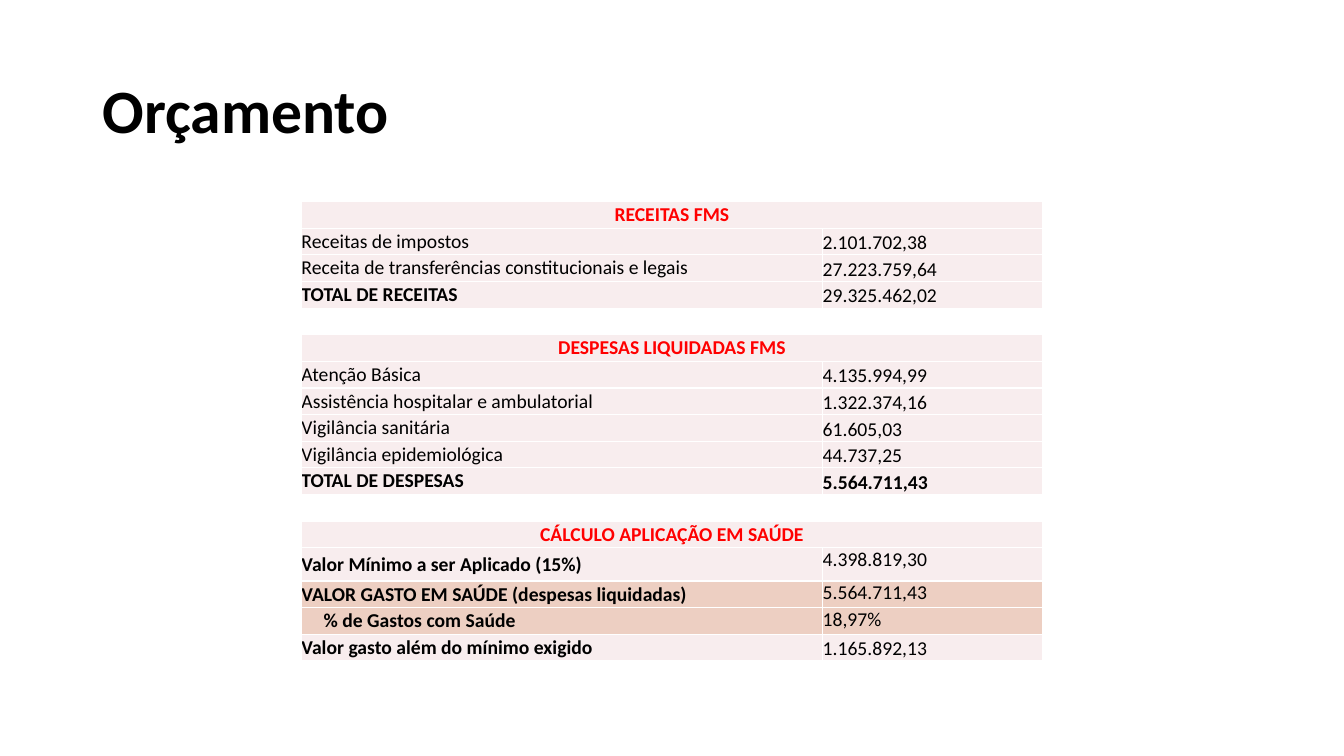
from dataclasses import dataclass

from lxml.etree import SubElement
from pptx import Presentation
from pptx.dml.color import RGBColor
from pptx.enum.text import MSO_ANCHOR as Anchor, PP_ALIGN as Align
from pptx.oxml import parse_xml
from pptx.oxml.ns import nsdecls, qn
from pptx.util import Inches, Pt


@dataclass(frozen=True)
class Theme:
    font: str = "Calibri"
    title_size: int = 44
    table_size: int = 14
    text: str = "000000"
    heading: str = "FF0000"
    white: str = "FFFFFF"
    row: str = "F8EDEE"
    highlight: str = "EDCFC2"


THEME = Theme()
COLUMN_WIDTHS = (5.17, 2.18)
TABLE_HEIGHT = 4.56
TALL_ROW, TALL_HEIGHT = 13, 0.33


@dataclass(frozen=True)
class Entry:
    label: str
    value: str
    label_bold: bool = False
    value_bold: bool = False
    value_anchor: Anchor = Anchor.BOTTOM
    fill: str = THEME.row
    indent: float = 0


@dataclass(frozen=True)
class Heading:
    text: str


@dataclass(frozen=True)
class Gap:
    merged: bool


ROWS = (
    Heading("RECEITAS FMS"),
    Entry("Receitas de impostos", "2.101.702,38"),
    Entry("Receita de transferências constitucionais e legais", "27.223.759,64"),
    Entry("TOTAL DE RECEITAS", "29.325.462,02", label_bold=True),
    Gap(merged=False),
    Heading("DESPESAS LIQUIDADAS FMS"),
    Entry("Atenção Básica", "4.135.994,99"),
    Entry("Assistência hospitalar e ambulatorial", "1.322.374,16"),
    Entry("Vigilância sanitária", "61.605,03"),
    Entry("Vigilância epidemiológica", "44.737,25"),
    Entry("TOTAL DE DESPESAS", "5.564.711,43", label_bold=True, value_bold=True),
    Gap(merged=True),
    Heading("CÁLCULO APLICAÇÃO EM SAÚDE"),
    Entry("Valor Mínimo a ser Aplicado (15%)", "4.398.819,30", label_bold=True,
          value_anchor=Anchor.TOP),
    Entry("VALOR GASTO EM SAÚDE (despesas liquidadas)", "5.564.711,43", label_bold=True,
          value_anchor=Anchor.TOP, fill=THEME.highlight),
    Entry("% de Gastos com Saúde", "18,97%", label_bold=True,
          value_anchor=Anchor.TOP, fill=THEME.highlight, indent=0.22),
    Entry("Valor gasto além do mínimo exigido", "1.165.892,13", label_bold=True),
)


def set_values(target, values):
    for name, value in values.items():
        setattr(target, name, value)


def add_run(paragraph, text, size, color=THEME.text, bold=False):
    run = paragraph.add_run()
    run.text = text
    set_values(run.font, {"name": THEME.font, "size": Pt(size), "bold": bold})
    run.font.color.rgb = RGBColor.from_string(color)


def add_title(slide, text):
    box = slide.shapes.add_textbox(Inches(0.92), Inches(0.4), Inches(11.5), Inches(1.45))
    set_values(box.text_frame, {"word_wrap": True, "vertical_anchor": Anchor.MIDDLE})
    paragraph = box.text_frame.paragraphs[0]
    paragraph.line_spacing = 0.9
    add_run(paragraph, text, THEME.title_size, bold=True)


def set_borders(cell):
    properties = cell._tc.get_or_add_tcPr()
    for index, side in enumerate(("lnL", "lnR", "lnT", "lnB")):
        properties.insert(index, parse_xml(
            f'<a:{side} {nsdecls("a")} w="{Pt(1)}"><a:solidFill>'
            f'<a:srgbClr val="{THEME.white}"/></a:solidFill></a:{side}>'))


def format_cell(cell, fill):
    set_values(cell, {"margin_left": 0, "margin_right": 0, "margin_top": 0,
                      "margin_bottom": 0, "vertical_anchor": Anchor.MIDDLE})
    cell.fill.solid()
    cell.fill.fore_color.rgb = RGBColor.from_string(fill)
    set_borders(cell)


def keep_empty_cell_low(cell):
    """Give an empty cell the table's type size so its row does not grow."""
    SubElement(cell.text_frame.paragraphs[0]._p, qn("a:endParaRPr"),
               sz=str(THEME.table_size * 100))


def fill_heading(label, value, heading):
    for cell in (label, value):
        format_cell(cell, THEME.row)
    label.merge(value)
    keep_empty_cell_low(value)
    paragraph = label.text_frame.paragraphs[0]
    paragraph.alignment = Align.CENTER
    add_run(paragraph, heading.text, THEME.table_size, THEME.heading, bold=True)


def fill_gap(label, value, gap):
    for cell in (label, value):
        format_cell(cell, THEME.white)
        keep_empty_cell_low(cell)
    if gap.merged:
        label.merge(value)


def fill_entry(label, value, entry):
    for cell, text, bold in ((label, entry.label, entry.label_bold),
                             (value, entry.value, entry.value_bold)):
        format_cell(cell, entry.fill)
        add_run(cell.text_frame.paragraphs[0], text, THEME.table_size, bold=bold)
    label.margin_left = Inches(entry.indent)
    value.vertical_anchor = entry.value_anchor


FILLERS = {Heading: fill_heading, Gap: fill_gap, Entry: fill_entry}


def add_budget_table(slide):
    table = slide.shapes.add_table(
        len(ROWS), len(COLUMN_WIDTHS), Inches(2.99), Inches(2),
        Inches(sum(COLUMN_WIDTHS)), Inches(TABLE_HEIGHT)).table
    set_values(table, {"first_row": False, "horz_banding": False})
    for column, width in zip(table.columns, COLUMN_WIDTHS):
        column.width = Inches(width)
    row_height = (TABLE_HEIGHT - TALL_HEIGHT) / (len(ROWS) - 1)
    for index, content in enumerate(ROWS):
        height = TALL_HEIGHT if index == TALL_ROW else row_height
        table.rows[index].height = Inches(height)
        FILLERS[type(content)](table.cell(index, 0), table.cell(index, 1), content)


def main():
    presentation = Presentation()
    set_values(presentation, {"slide_width": Inches(13.33), "slide_height": Inches(7.5)})
    slide = presentation.slides.add_slide(presentation.slide_layouts[6])
    add_title(slide, "Orçamento")
    add_budget_table(slide)
    presentation.save("out.pptx")


if __name__ == "__main__":
    main()
